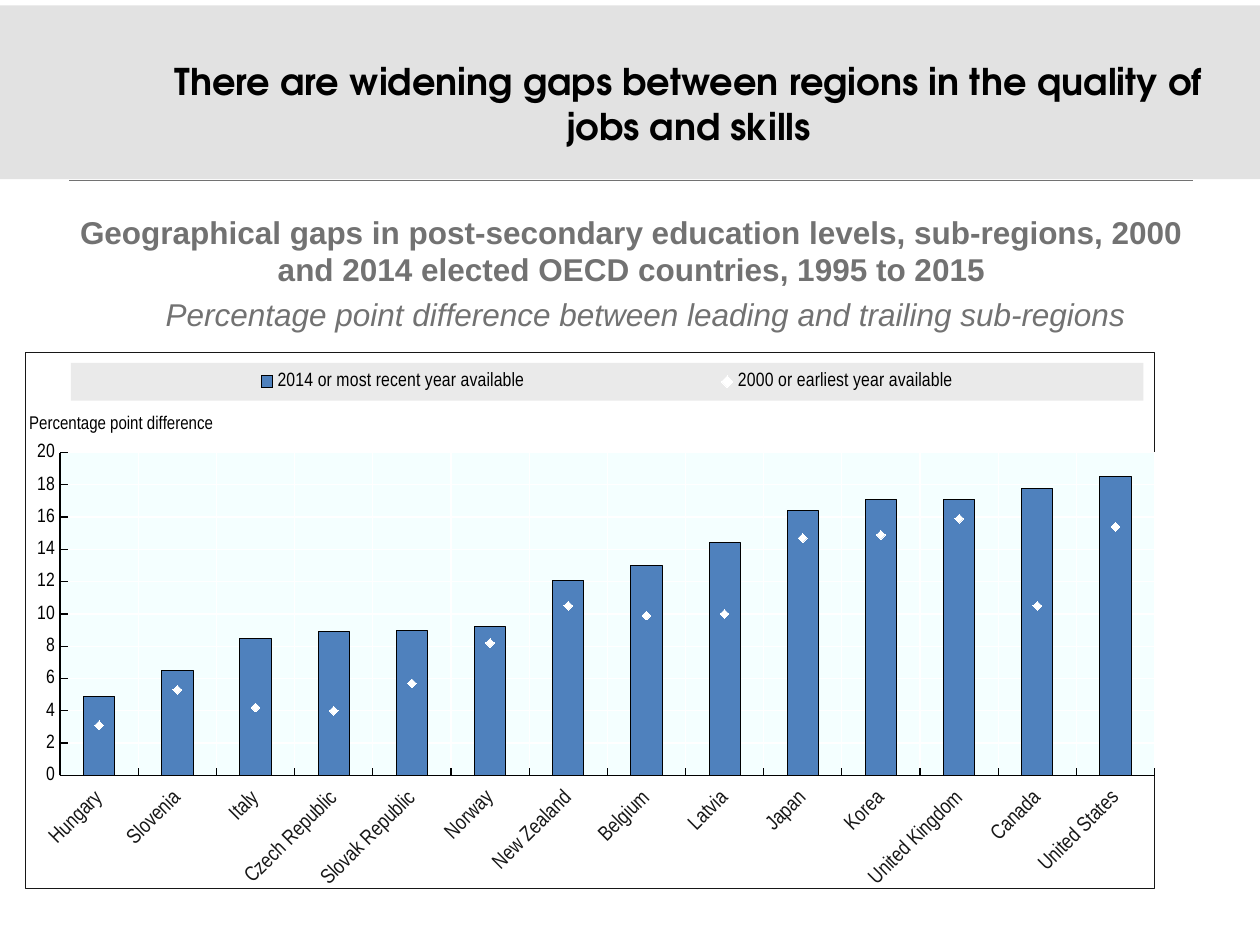
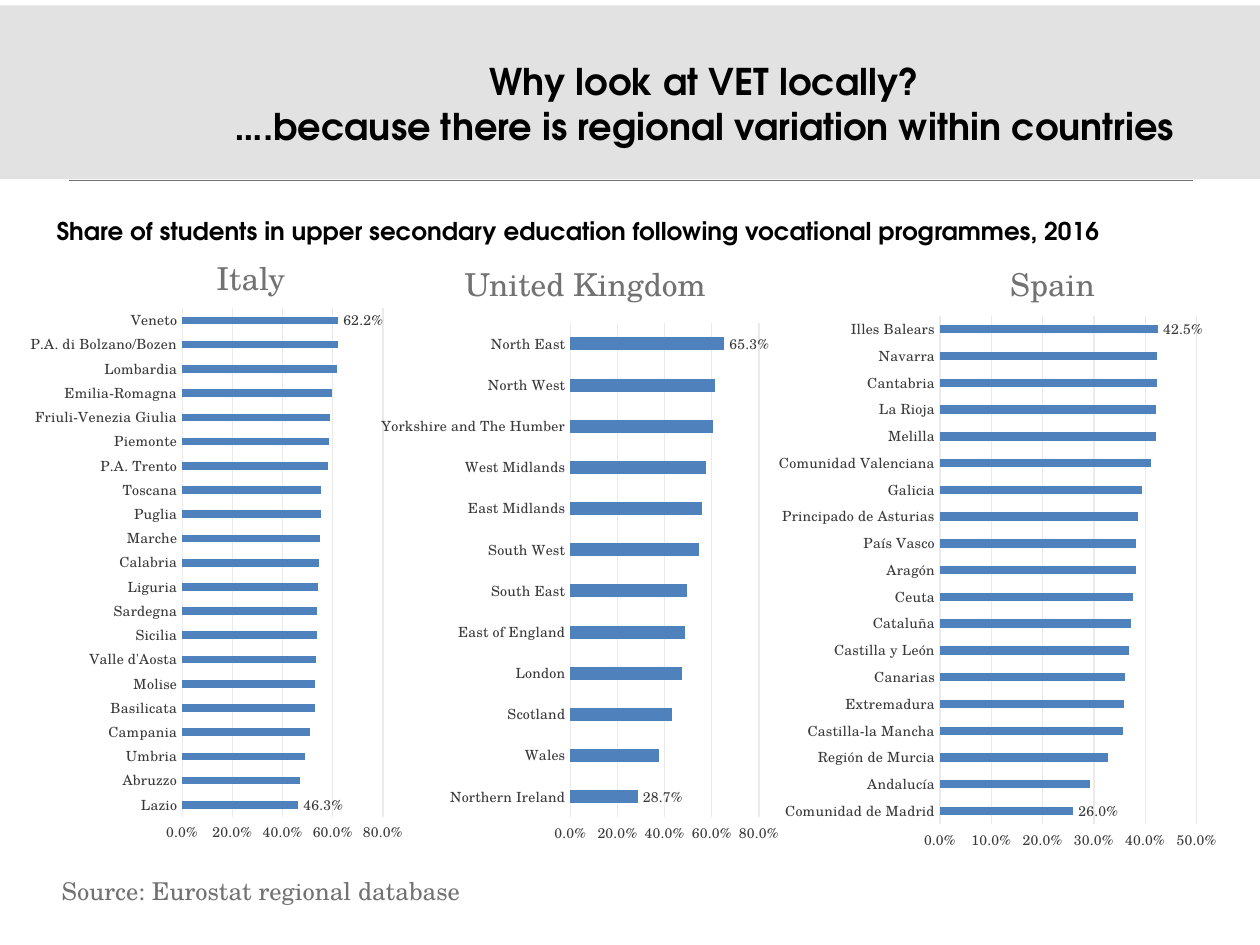
import pptx
import pptx.util
import pptx.chart.data
import pptx.dml.color
import pptx.enum.chart
import pptx.enum.shapes
import pptx.enum.text
import pptx.oxml
import pptx.oxml.ns

Pt = pptx.util.Pt
kind = pptx.enum.chart
hues = {"band": "E2E2E2", "gray": "727272", "black": "000000", "white": "FFFFFF",
        "bar": "4F81BD", "grid": "EAEAEA", "label": "393939", "frame": "171717",
        "plot": "F4FFFF"}
head, body, slim, sans = "TeX Gyre Adventor", "TeX Gyre Schola", "Arial Narrow", "Arial"
space = pptx.oxml.ns.nsdecls("c", "a")


def style(font, size, hue, face, bold=False, slant=False):
    font.size = Pt(size)
    font.name = face
    font.bold = bold
    font.italic = slant
    font.color.rgb = pptx.dml.color.RGBColor.from_string(hues[hue])


def write(slide, text, box, size=18, hue="gray", face=body, bold=False, slant=False,
          mid=False, anchor="TOP"):
    frame = slide.shapes.add_textbox(*map(Pt, box)).text_frame
    frame.word_wrap = True
    frame.vertical_anchor = pptx.enum.text.MSO_ANCHOR[anchor]
    para = frame.paragraphs[0]
    para.text = text
    para.alignment = pptx.enum.text.PP_ALIGN.CENTER if mid else pptx.enum.text.PP_ALIGN.LEFT
    style(para.font, size, hue, face, bold, slant)
    for run in para.runs:
        style(run.font, size, hue, face, bold, slant)


deck = pptx.Presentation()
deck.slide_width, deck.slide_height = Pt(720), Pt(540)

titles = [
    ("There are widening gaps between regions in the quality of jobs and skills", 617),
    ("Why look at VET locally?\n….because there is regional variation within countries", 635),
]
slides = []
for text, width in titles:
    slide = deck.slides.add_slide(deck.slide_layouts[6])
    band = slide.shapes.add_shape(pptx.enum.shapes.MSO_SHAPE.RECTANGLE,
                                  0, Pt(3), Pt(720), Pt(99.4))
    band.shadow.inherit = False
    band.fill.solid()
    band.fill.fore_color.rgb = pptx.dml.color.RGBColor.from_string(hues["band"])
    band.line.fill.background()
    rule = slide.shapes.add_connector(pptx.enum.shapes.MSO_CONNECTOR.STRAIGHT,
                                      Pt(39.6), Pt(103), Pt(681.8), Pt(103))
    rule.line.width = Pt(0.5)
    rule.line.color.rgb = pptx.dml.color.RGBColor.from_string(hues["gray"])
    rule.element.spPr.append(pptx.oxml.parse_xml(f"<a:effectLst {space}/>"))
    write(slide, text, (85, 18.7, width, 80.6), size=21, hue="black", face=head,
          bold=True, mid=True, anchor="MIDDLE")
    slides.append(slide)
gaps, share = slides

write(gaps, "Geographical gaps in post-secondary education levels, sub-regions, 2000 "
      "and 2014 elected OECD countries, 1995 to 2015", (23.8, 118, 674, 50),
      face=sans, bold=True, mid=True)
write(gaps, "Percentage point difference between leading and trailing sub-regions",
      (77.8, 165, 582, 29), face=sans, slant=True, mid=True)

levels = [
    ("Hungary", 4.9, 3.1), ("Slovenia", 6.5, 5.3), ("Italy", 8.5, 4.2),
    ("Czech Republic", 8.9, 4), ("Slovak Republic", 9, 5.7), ("Norway", 9.2, 8.2),
    ("New Zealand", 12.1, 10.5), ("Belgium", 13, 9.9), ("Latvia", 14.4, 10),
    ("Japan", 16.4, 14.7), ("Korea", 17.1, 14.9), ("United Kingdom", 17.1, 15.9),
    ("Canada", 17.8, 10.5), ("United States", 18.5, 15.4),
]
names, late, early = zip(*levels)
data = pptx.chart.data.CategoryChartData()
data.categories = names
data.add_series("2014 or most recent year available", late)
data.add_series("2000 or earliest year available", early)
chart = gaps.shapes.add_chart(kind.XL_CHART_TYPE.COLUMN_CLUSTERED, Pt(14.4), Pt(200.9),
                              Pt(645.8), Pt(307.4), data).chart
chart.has_title = False
style(chart.font, 10, "gray", body)
chart.plots[0].gap_width = 150
chart.plots[0].vary_by_categories = False

root = chart.element
bars = root.xpath(".//c:barChart")[0]
marks = bars.xpath("c:ser")[1]
for part in marks.xpath("c:invertIfNegative"):
    marks.remove(part)
lines = pptx.oxml.parse_xml(
    f'<c:lineChart {space}><c:grouping val="standard"/><c:varyColors val="0"/>'
    '<c:marker val="1"/></c:lineChart>')
lines.insert(2, marks)
for axis in bars.xpath("c:axId"):
    lines.append(pptx.oxml.parse_xml(f'<c:axId {space} val="{axis.get("val")}"/>'))
bars.addnext(lines)

col = chart.plots[0].series[0].format
col.fill.solid()
col.fill.fore_color.rgb = pptx.dml.color.RGBColor.from_string(hues["bar"])
col.line.width = Pt(0.5)
col.line.color.rgb = pptx.dml.color.RGBColor.from_string(hues["black"])
dots = chart.plots[1].series[0]
dots.smooth = False
dots.format.line.fill.background()
dots.marker.style = kind.XL_MARKER_STYLE.DIAMOND
dots.marker.size = 5
dots.marker.format.fill.solid()
dots.marker.format.fill.fore_color.rgb = pptx.dml.color.RGBColor.from_string(hues["white"])
dots.marker.format.line.color.rgb = pptx.dml.color.RGBColor.from_string(hues["white"])

for axis, size, hue in ((chart.category_axis, 12, "frame"), (chart.value_axis, 11, "black")):
    style(axis.tick_labels.font, size, hue, slim)
    axis.major_tick_mark = kind.XL_TICK_MARK.INSIDE
    axis.minor_tick_mark = kind.XL_TICK_MARK.NONE
    axis.has_major_gridlines = True
    for line, tint in ((axis.format.line, "black"), (axis.major_gridlines.format.line, "white")):
        line.width = Pt(0.75)
        line.color.rgb = pptx.dml.color.RGBColor.from_string(hues[tint])
chart.category_axis.tick_label_position = kind.XL_TICK_LABEL_POSITION.LOW
root.xpath(".//c:catAx/c:txPr/a:bodyPr")[0].set("rot", "-2700000")
scale = chart.value_axis
scale.minimum_scale, scale.maximum_scale, scale.major_unit = 0, 20, 2
label = scale.axis_title.text_frame
label.text = "Percentage point difference"
style(label.paragraphs[0].runs[0].font, 10.5, "black", slim)
root.xpath(".//c:valAx/c:title//a:bodyPr")[0].set("rot", "0")
chart.has_legend = True
chart.legend.position = kind.XL_LEGEND_POSITION.TOP
chart.legend.include_in_layout = True
style(chart.legend.font, 11, "black", slim)

places = [
    ("c:chart/c:plotArea", 0, (0.01, 0.17, 0.99, 0.83)),
    ("c:chart/c:legend", 1, (0.04, 0.02, 0.95, 0.07)),
    (".//c:valAx/c:title", 1, (0, 0.11)),
]
for route, slot, spots in places:
    part = root.xpath(route)[0]
    for old in part.xpath("c:layout"):
        part.remove(old)
    tags = "".join(f'<c:{side}Mode val="edge"/>' for side in "xy")
    tags += "".join(f'<c:{side} val="{spot}"/>' for side, spot in zip("xywh", spots))
    part.insert(slot, pptx.oxml.parse_xml(
        f"<c:layout {space}><c:manualLayout>{tags}</c:manualLayout></c:layout>"))

fills = [
    ("c:chart", "white", "frame"),
    ("c:chart/c:plotArea/*[last()]", "plot", None),
    ("c:chart/c:legend/c:overlay", "grid", None),
]
for route, fill, edge in fills:
    paint = '<a:solidFill><a:srgbClr val="{}"/></a:solidFill>'
    line = paint.format(hues[edge]) if edge else "<a:noFill/>"
    root.xpath(route)[0].addnext(pptx.oxml.parse_xml(
        f'<c:spPr {space}>{paint.format(hues[fill])}<a:ln w="9525">{line}</a:ln></c:spPr>'))

write(share, "Share of students in upper secondary education following vocational "
      "programmes, 2016", (25.2, 120.2, 680, 24.5), size=14, hue="black", face=head, bold=True)
write(share, "Source: Eurostat regional database", (28.1, 496.8, 414, 24.5), size=14)

lands = [
    ("Italy", (116.6, 144.7, 68, 29), (13, 169.9, 221.8, 318.2), 0.8, 0.2, [
        ("Lazio", 0.463), ("Abruzzo", 0.469), ("Umbria", 0.489), ("Campania", 0.51),
        ("Basilicata", 0.529), ("Molise", 0.53), ("Valle d'Aosta", 0.535),
        ("Sicilia", 0.537), ("Sardegna", 0.538), ("Liguria", 0.542),
        ("Calabria", 0.546), ("Marche", 0.548), ("Puglia", 0.552), ("Toscana", 0.555),
        ("P.A. Trento", 0.581), ("Piemonte", 0.583), ("Friuli-Venezia Giulia", 0.59),
        ("Emilia-Romagna", 0.598), ("Lombardia", 0.615),
        ("P.A. di Bolzano/Bozen", 0.621), ("Veneto", 0.622)]),
    ("United Kingdom", (258.5, 147.6, 163.4, 29), (213.1, 178.6, 236.9, 309.6), 0.8, 0.2, [
        ("Northern Ireland", 0.287), ("Wales", 0.374), ("Scotland", 0.432),
        ("London", 0.475), ("East of England", 0.487), ("South East", 0.496),
        ("South West", 0.544), ("East Midlands", 0.558), ("West Midlands", 0.574),
        ("Yorkshire and The Humber", 0.603), ("North West", 0.615),
        ("North East", 0.653)]),
    ("Spain", (570.2, 147.6, 85, 29), (439.9, 174.2, 260.6, 318.2), 0.5, 0.1, [
        ("Comunidad de Madrid", 0.26), ("Andalucía", 0.293), ("Región de Murcia", 0.328),
        ("Castilla-la Mancha", 0.356), ("Extremadura", 0.358), ("Canarias", 0.361),
        ("Castilla y León", 0.369), ("Cataluña", 0.373), ("Ceuta", 0.376),
        ("Aragón", 0.381), ("País Vasco", 0.382), ("Principado de Asturias", 0.385),
        ("Galicia", 0.393), ("Comunidad Valenciana", 0.411), ("Melilla", 0.42),
        ("La Rioja", 0.42), ("Cantabria", 0.422), ("Navarra", 0.422),
        ("Illes Balears", 0.425)]),
]
for land, spot, box, top, step, rows in lands:
    names, rates = zip(*rows)
    data = pptx.chart.data.CategoryChartData(number_format="0.0%")
    data.categories = names
    data.add_series("Series 1", rates)
    chart = share.shapes.add_chart(kind.XL_CHART_TYPE.BAR_CLUSTERED, *map(Pt, box), data).chart
    chart.has_title = chart.has_legend = False
    style(chart.font, 8, "label", body)
    plot = chart.plots[0]
    plot.gap_width = 219
    plot.vary_by_categories = False
    bars = plot.series[0]
    bars.format.fill.solid()
    bars.format.fill.fore_color.rgb = pptx.dml.color.RGBColor.from_string(hues["bar"])
    bars.data_labels.show_value = False
    for end in (0, len(rows) - 1):
        tag = bars.points[end].data_label
        tag.position = kind.XL_LABEL_POSITION.OUTSIDE_END
        style(tag.font, 8, "label", body)
    side, scale = chart.category_axis, chart.value_axis
    for axis in (side, scale):
        axis.major_tick_mark = axis.minor_tick_mark = kind.XL_TICK_MARK.NONE
        style(axis.tick_labels.font, 8, "label", body)
    scale.minimum_scale, scale.maximum_scale, scale.major_unit = 0, top, step
    scale.tick_labels.number_format = "0.0%"
    scale.tick_labels.number_format_is_linked = False
    scale.format.line.fill.background()
    for line in (side.format.line, scale.major_gridlines.format.line):
        line.width = Pt(0.75)
        line.color.rgb = pptx.dml.color.RGBColor.from_string(hues["grid"])
    write(share, land, spot)

deck.save("out.pptx")
